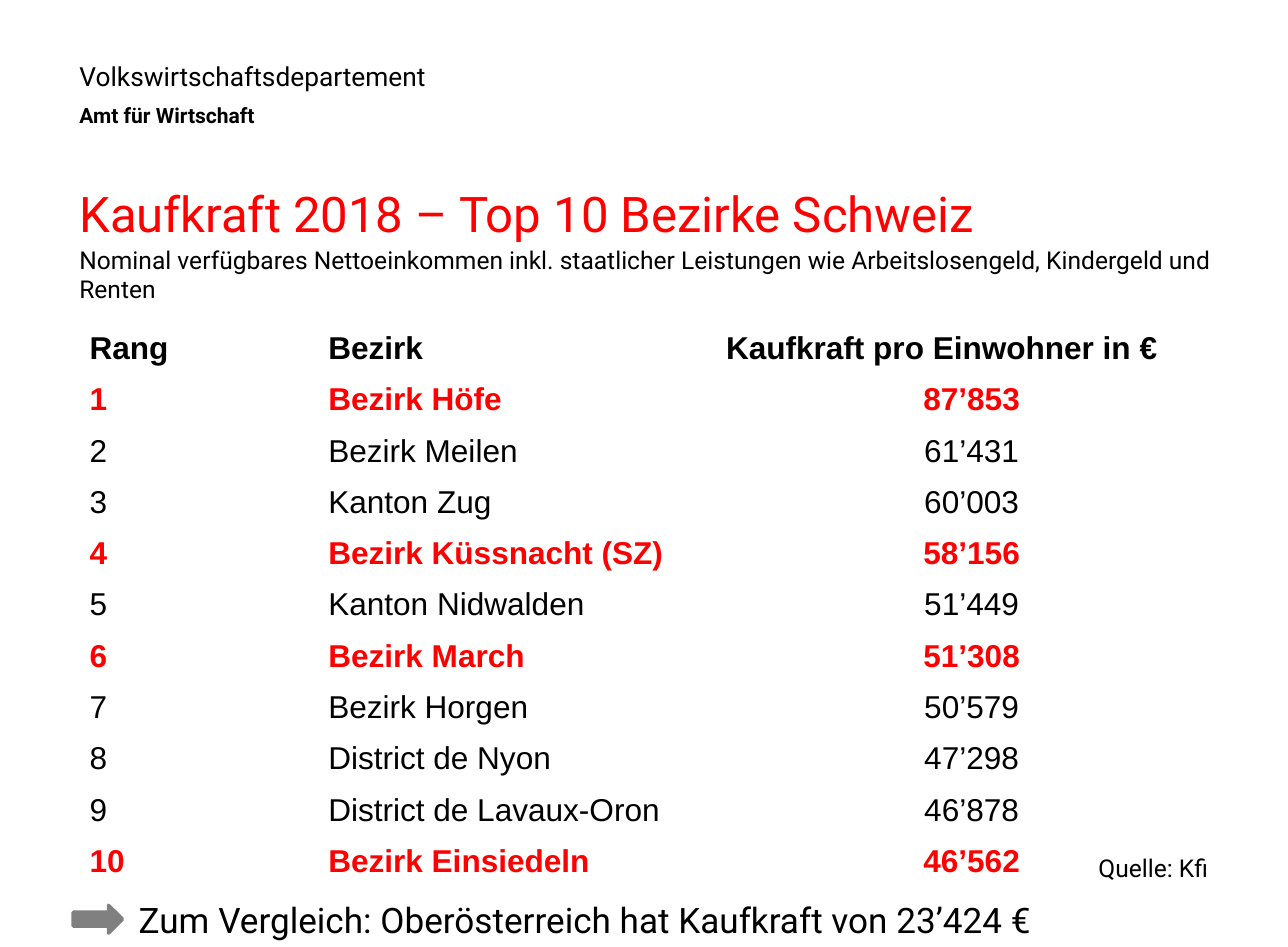
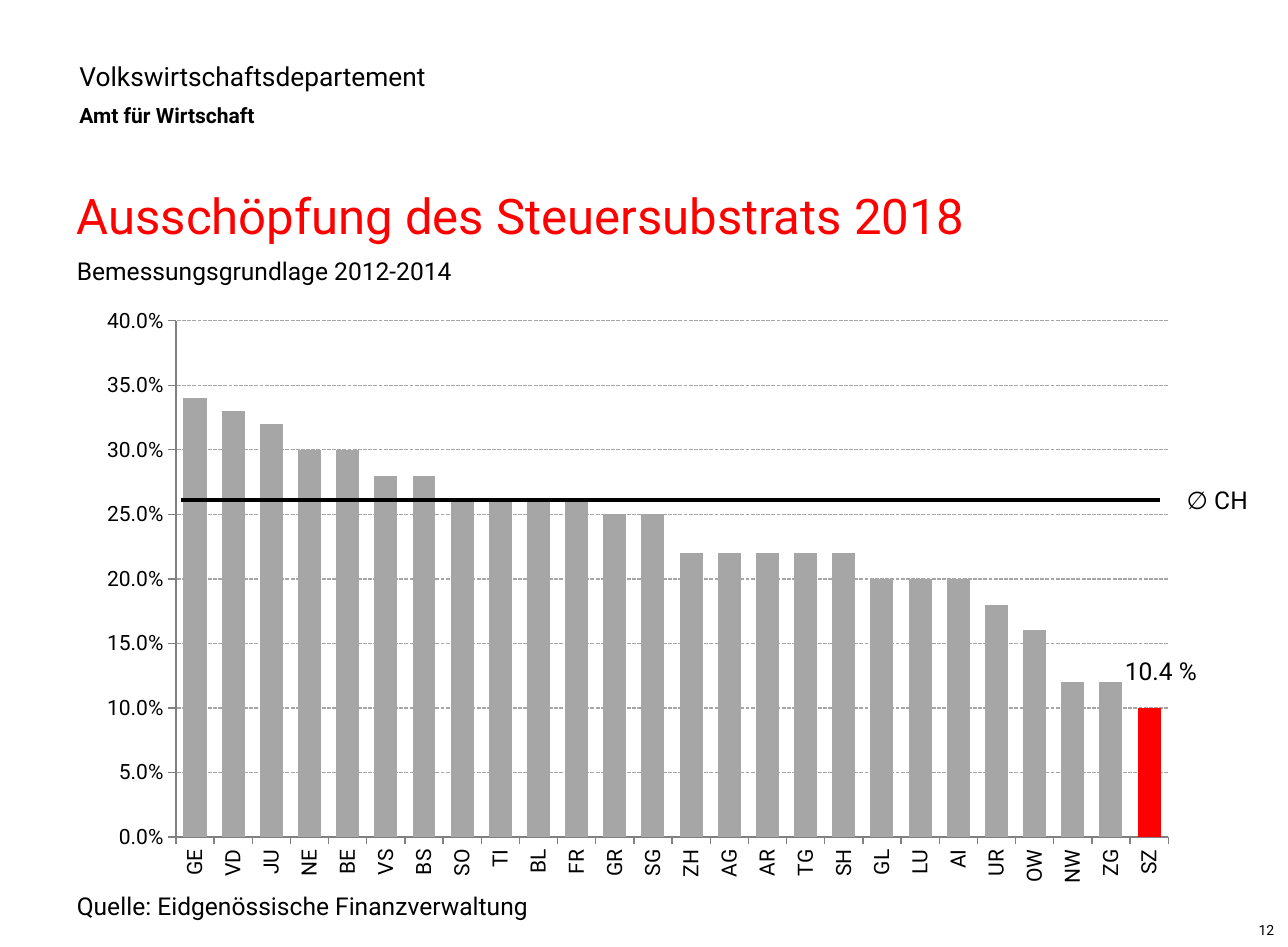
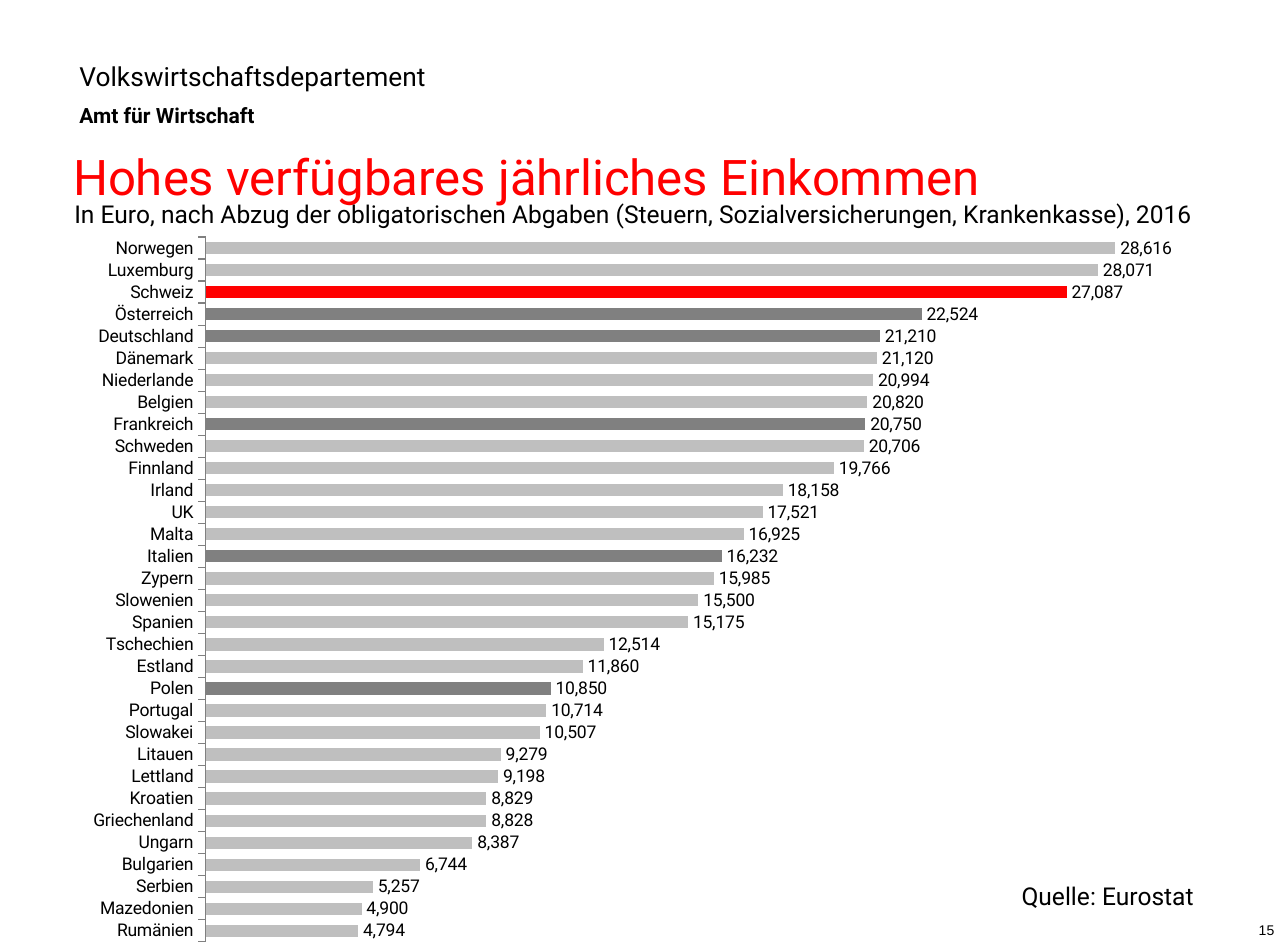
from dataclasses import dataclass, field
from typing import NamedTuple, Optional

from lxml import etree
from pptx import Presentation
from pptx.chart import data as chart_data
from pptx.dml.color import RGBColor
from pptx.enum import chart as ce
from pptx.enum import dml, shapes, text
from pptx.oxml import ns
from pptx.util import Pt

EMU_PER_PX = 9144


@dataclass(frozen=True)
class Theme:
    heading: str = "Roboto"
    table: str = "Arial"
    black: str = "000000"
    white: str = "FFFFFF"
    red: str = "FF0000"
    axis: str = "808080"
    neighbour: str = "808080"
    canton: str = "A6A6A6"
    country: str = "BFBFBF"
    title_pt: int = 28
    conclusion_pt: int = 20
    table_pt: int = 18
    department_pt: int = 15
    body_pt: int = 14
    office_pt: int = 12
    country_pt: int = 10
    number_pt: int = 8


THEME = Theme()


class Box(NamedTuple):
    left: int
    top: int
    width: int
    height: int


class Line(NamedTuple):
    words: str
    size: int
    bold: bool = False
    before: int = 0


@dataclass(frozen=True)
class Label:
    box: Box
    lines: tuple[Line, ...]
    color: str = THEME.black
    font: str = THEME.heading
    align: text.PP_ALIGN = text.PP_ALIGN.LEFT
    anchor: text.MSO_ANCHOR = text.MSO_ANCHOR.TOP
    inset: bool = True
    wrap: bool = True
    fill: Optional[str] = None


@dataclass(frozen=True)
class BarChart:
    box: Box
    kind: ce.XL_CHART_TYPE
    values: dict[str, float]
    number_format: str
    size: int
    gap: int
    maximum: float
    plot: tuple[float, float, float, float]
    color: str
    highlights: dict[str, str] = field(default_factory=dict)


class District(NamedTuple):
    rank: str
    name: str
    power: str
    in_schwyz: bool = False


HEADER = Label(
    Box(63, 48, 297, 59),
    (Line("Volkswirtschaftsdepartement", THEME.department_pt),
     Line("Amt für Wirtschaft", THEME.office_pt, True, 6)),
    inset=False,
)

DISTRICTS = (
    District("1", "Bezirk Höfe", "87’853", True),
    District("2", "Bezirk Meilen", "61’431"),
    District("3", "Kanton Zug", "60’003"),
    District("4", "Bezirk Küssnacht (SZ)", "58’156", True),
    District("5", "Kanton Nidwalden", "51’449"),
    District("6", "Bezirk March", "51’308", True),
    District("7", "Bezirk Horgen", "50’579"),
    District("8", "District de Nyon", "47’298"),
    District("9", "District de Lavaux-Oron", "46’878"),
    District("10", "Bezirk Einsiedeln", "46’562", True),
)

TAX_USE = BarChart(
    Box(62, 232, 889, 471), ce.XL_CHART_TYPE.COLUMN_CLUSTERED,
    {"GE": 0.34, "VD": 0.33, "JU": 0.32, "NE": 0.3, "BE": 0.3,
     "VS": 0.28, "BS": 0.28, "SO": 0.26, "TI": 0.26, "BL": 0.26,
     "FR": 0.26, "GR": 0.25, "SG": 0.25, "ZH": 0.22, "AG": 0.22,
     "AR": 0.22, "TG": 0.22, "SH": 0.22, "GL": 0.2, "LU": 0.2,
     "AI": 0.2, "UR": 0.18, "OW": 0.16, "NW": 0.12, "ZG": 0.12,
     "SZ": 0.1},
    "0.0%", THEME.office_pt, 66, 0.4, (0.087, 0.047, 0.884, 0.868),
    THEME.canton, {"SZ": THEME.red},
)

INCOME = BarChart(
    Box(61, 182, 872, 579), ce.XL_CHART_TYPE.BAR_CLUSTERED,
    {"Norwegen": 28616, "Luxemburg": 28071, "Schweiz": 27087,
     "Österreich": 22524, "Deutschland": 21210, "Dänemark": 21120,
     "Niederlande": 20994, "Belgien": 20820, "Frankreich": 20750,
     "Schweden": 20706, "Finnland": 19766, "Irland": 18158, "UK": 17521,
     "Malta": 16925, "Italien": 16232, "Zypern": 15985, "Slowenien": 15500,
     "Spanien": 15175, "Tschechien": 12514, "Estland": 11860, "Polen": 10850,
     "Portugal": 10714, "Slowakei": 10507, "Litauen": 9279, "Lettland": 9198,
     "Kroatien": 8829, "Griechenland": 8828, "Ungarn": 8387,
     "Bulgarien": 6744, "Serbien": 5257, "Mazedonien": 4900,
     "Rumänien": 4794},
    "#,##0", THEME.country_pt, 81, 30000, (0.117, 0.01, 0.866, 0.964),
    THEME.country,
    {"Schweiz": THEME.red} | dict.fromkeys(
        ("Österreich", "Deutschland", "Frankreich", "Italien", "Polen"),
        THEME.neighbour),
)


def px(length: int) -> int:
    return length * EMU_PER_PX


def emu(box: Box) -> tuple[int, ...]:
    return tuple(px(length) for length in box)


def rgb(color: str) -> RGBColor:
    return RGBColor.from_string(color)


def style(font, size: int, color: str, name: str, bold: bool = False) -> None:
    font.size = Pt(size)
    font.color.rgb = rgb(color)
    font.name = name
    font.bold = bold


def add_label(slide, label: Label) -> None:
    holder = slide.shapes.add_textbox(*emu(label.box))
    if label.fill:
        holder.fill.solid()
        holder.fill.fore_color.rgb = rgb(label.fill)
    frame = holder.text_frame
    frame.word_wrap = label.wrap
    frame.vertical_anchor = label.anchor
    if not label.inset:
        frame.margin_left = frame.margin_top = 0
        frame.margin_right = frame.margin_bottom = 0
    frame.text = "\n".join(line.words for line in label.lines)
    for paragraph, line in zip(frame.paragraphs, label.lines):
        paragraph.alignment = label.align
        if line.before:
            paragraph.space_before = Pt(line.before)
        for run in paragraph.runs:
            style(run.font, line.size, label.color, label.font, line.bold)


def add_body(slide, box: Box, words: str, size: int = THEME.body_pt) -> None:
    add_label(slide, Label(box, (Line(words, size),)))


def add_number(slide, number: str, font: str) -> None:
    add_label(slide, Label(Box(807, 725, 212, 25),
                           (Line(number, THEME.number_pt),),
                           font=font, align=text.PP_ALIGN.RIGHT))


def start_slide(deck, title: str, box: Box, fill: Optional[str] = None):
    slide = deck.slides.add_slide(deck.slide_layouts[6])
    add_label(slide, HEADER)
    add_label(slide, Label(box, (Line(title, THEME.title_pt),), THEME.red,
                           anchor=text.MSO_ANCHOR.MIDDLE, fill=fill))
    return slide


def add_ranking(slide, box: Box, widths: tuple[int, ...]) -> None:
    heading = District("Rang", "Bezirk", "Kaufkraft pro Einwohner in €")
    rows = (heading, *DISTRICTS)
    ranking = slide.shapes.add_table(len(rows), len(widths), *emu(box)).table
    ranking.horz_banding = False
    for column, width in zip(ranking.columns, widths):
        column.width = px(width)
    for index, district in enumerate(rows):
        ranking.rows[index].height = px(box.height) // len(rows)
        color = THEME.red if district.in_schwyz else THEME.black
        bold = district.in_schwyz or index == 0
        for column, words in enumerate(district[:3]):
            cell = ranking.cell(index, column)
            cell.fill.background()
            cell.text_frame.text = words
            paragraph = cell.text_frame.paragraphs[0]
            if index and column == 2:
                paragraph.alignment = text.PP_ALIGN.CENTER
            style(paragraph.runs[0].font, THEME.table_pt, color, THEME.table, bold)


def place_plot(chart, plot: tuple[float, float, float, float]) -> None:
    area = chart.element.find(".//" + ns.qn("c:plotArea"))
    for old in area.findall(ns.qn("c:layout")):
        area.remove(old)
    layout = etree.Element(ns.qn("c:layout"))
    manual = etree.SubElement(layout, ns.qn("c:manualLayout"))
    settings = [("layoutTarget", "inner"), ("xMode", "edge"), ("yMode", "edge")]
    settings += zip("xywh", map(str, plot))
    for tag, value in settings:
        etree.SubElement(manual, ns.qn(f"c:{tag}")).set("val", value)
    area.insert(0, layout)


def add_bars(slide, bars: BarChart):
    data = chart_data.CategoryChartData(number_format=bars.number_format)
    data.categories = list(bars.values)
    data.add_series("Series 1", list(bars.values.values()))
    chart = slide.shapes.add_chart(bars.kind, *emu(bars.box), data).chart
    chart.has_legend = False
    chart.has_title = False
    style(chart.font, bars.size, THEME.black, THEME.heading)
    place_plot(chart, bars.plot)

    plot = chart.plots[0]
    plot.gap_width = bars.gap
    plot.vary_by_categories = False
    series = plot.series[0]
    series.invert_if_negative = False
    series.format.fill.solid()
    series.format.fill.fore_color.rgb = rgb(bars.color)
    names = list(bars.values)
    for name, color in bars.highlights.items():
        fill = series.points[names.index(name)].format.fill
        fill.solid()
        fill.fore_color.rgb = rgb(color)

    for axis in (chart.category_axis, chart.value_axis):
        axis.major_tick_mark = ce.XL_TICK_MARK.OUTSIDE
        axis.minor_tick_mark = ce.XL_TICK_MARK.NONE
        axis.has_major_gridlines = False
        axis.format.line.color.rgb = rgb(THEME.axis)
        style(axis.tick_labels.font, bars.size, THEME.black, THEME.heading)
    chart.value_axis.minimum_scale = 0
    chart.value_axis.maximum_scale = bars.maximum
    chart.value_axis.tick_labels.number_format = bars.number_format
    chart.value_axis.tick_labels.number_format_is_linked = False
    return chart


def add_average(slide) -> None:
    average = slide.shapes.add_connector(
        shapes.MSO_CONNECTOR.STRAIGHT, px(919), px(396), px(143), px(396))
    average.line.color.rgb = rgb(THEME.black)
    average.line.width = Pt(2.75)
    properties = average.element.find(ns.qn("p:spPr"))
    etree.SubElement(properties, ns.qn("a:effectLst"))


def add_arrow(slide, box: Box) -> None:
    arrow = slide.shapes.add_shape(shapes.MSO_SHAPE.RIGHT_ARROW, *emu(box))
    arrow.shadow.inherit = False
    arrow.fill.solid()
    arrow.fill.fore_color.rgb = rgb(THEME.neighbour)
    arrow.line.color.rgb = rgb(THEME.neighbour)
    arrow.line.width = Pt(2)


def build_purchasing_power(deck) -> None:
    slide = start_slide(deck, "Kaufkraft 2018 – Top 10 Bezirke Schweiz",
                        Box(53, 135, 867, 67))
    add_body(slide, Box(53, 189, 953, 57),
             "Nominal verfügbares Nettoeinkommen inkl. staatlicher Leistungen "
             "wie Arbeitslosengeld, Kindergeld und Renten")
    add_ranking(slide, Box(61, 257, 913, 447), (189, 315, 409))
    add_body(slide, Box(100, 707, 756, 43),
             "Zum Vergleich: Oberösterreich hat Kaufkraft von 23’424 €",
             THEME.conclusion_pt)
    add_arrow(slide, Box(58, 717, 39, 22))
    add_body(slide, Box(860, 671, 128, 34), "Quelle: Kfi")


def build_tax_use(deck) -> None:
    slide = start_slide(deck, "Ausschöpfung des Steuersubstrats 2018",
                        Box(51, 137, 867, 67))
    add_number(slide, "12", THEME.heading)
    chart = add_bars(slide, TAX_USE)
    chart.value_axis.has_major_gridlines = True
    grid = chart.value_axis.major_gridlines.format.line
    grid.color.rgb = rgb(THEME.canton)
    grid.width = Pt(0.75)
    grid.dash_style = dml.MSO_LINE.SQUARE_DOT
    labels = chart.category_axis._element.find(ns.qn("c:txPr"))
    labels.find(ns.qn("a:bodyPr")).set("rot", "-5400000")
    add_average(slide)
    add_body(slide, Box(930, 379, 76, 32), "∅ CH")
    add_body(slide, Box(881, 515, 101, 34), "10.4 %")
    add_body(slide, Box(51, 701, 842, 34), "Quelle: Eidgenössische Finanzverwaltung")
    add_body(slide, Box(51, 198, 366, 34), "Bemessungsgrundlage 2012-2014")


def build_income(deck) -> None:
    slide = start_slide(deck, "Hohes verfügbares jährliches Einkommen",
                        Box(48, 108, 839, 62), THEME.white)
    add_number(slide, "15", THEME.table)
    add_body(slide, Box(49, 153, 933, 34),
             "In Euro, nach Abzug der obligatorischen Abgaben (Steuern, "
             "Sozialversicherungen, Krankenkasse), 2016")
    add_label(slide, Label(Box(809, 698, 137, 24),
                           (Line("Quelle: Eurostat", THEME.body_pt),),
                           inset=False, wrap=False, fill=THEME.white))
    chart = add_bars(slide, INCOME)
    chart.category_axis.reverse_order = True
    chart.value_axis.visible = False
    plot = chart.plots[0]
    plot.has_data_labels = True
    amounts = plot.data_labels
    amounts.show_value = True
    amounts.number_format = INCOME.number_format
    amounts.number_format_is_linked = False
    amounts.position = ce.XL_LABEL_POSITION.OUTSIDE_END
    style(amounts.font, INCOME.size, THEME.black, THEME.heading)


def main() -> None:
    deck = Presentation()
    deck.slide_width = px(1020)
    deck.slide_height = px(750)
    build_purchasing_power(deck)
    build_tax_use(deck)
    build_income(deck)
    deck.save("out.pptx")


if __name__ == "__main__":
    main()
